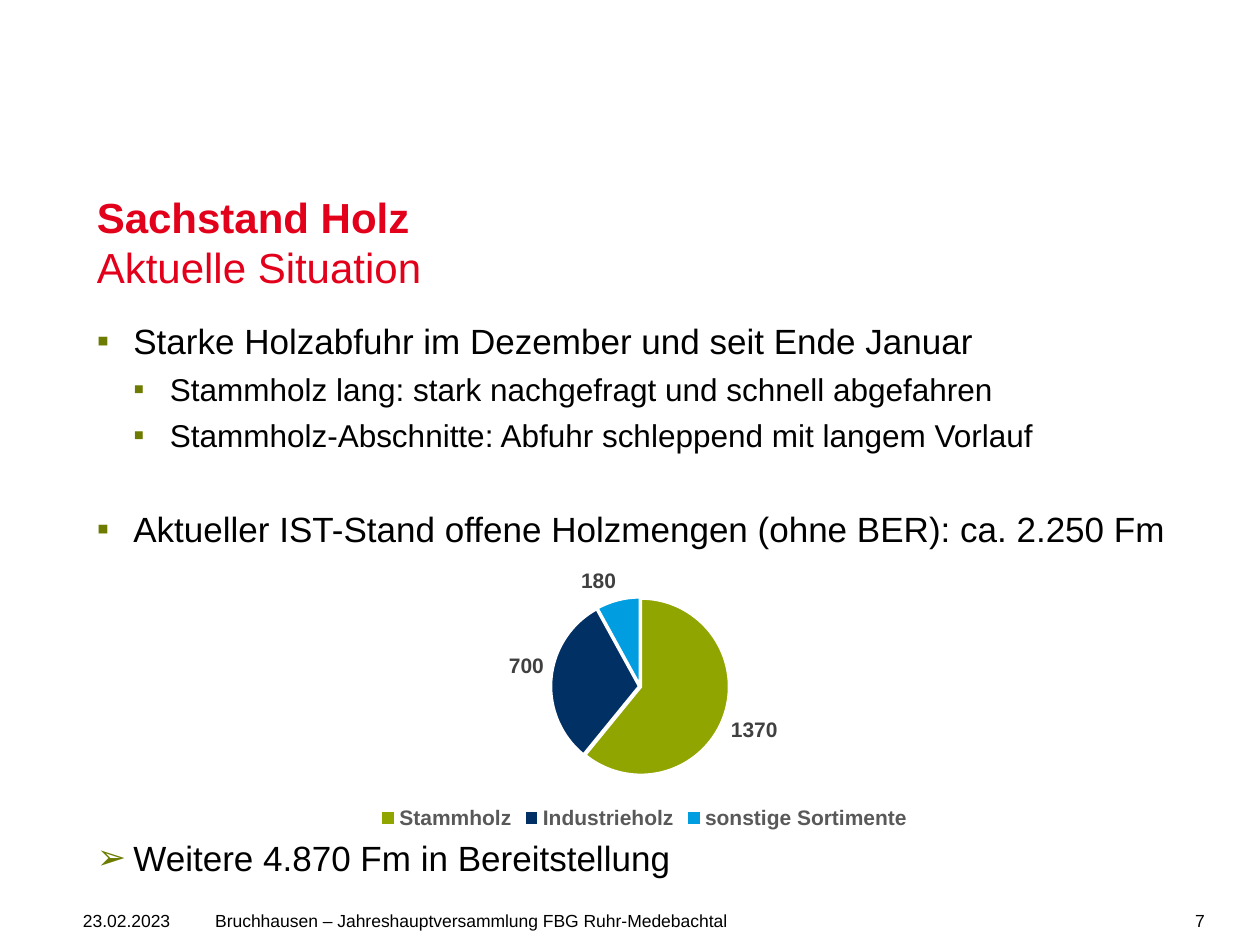
from dataclasses import dataclass

from lxml import etree
from pptx import Presentation
from pptx import util as u
from pptx.chart.data import CategoryChartData
from pptx.dml.color import RGBColor
from pptx.enum import chart as charts, text
from pptx.oxml.ns import qn

WIDTH, HEIGHT = u.Inches(10), u.Inches(7.5)


@dataclass(frozen=True)
class Theme:
    font: str = "Arial"
    title: str = "E2001A"
    body: str = "000000"
    bullet: str = "6D7C00"
    legend: str = "595959"
    label: str = "404040"
    gap: str = "FFFFFF"
    slices: tuple = ("91A500", "003064", "009EE0")
    title_size: float = 24
    level_sizes: tuple = (20, 18)
    chart_size: float = 12
    footer_size: float = 10


THEME = Theme()


def share(left, top, width, height):
    """Turn shares of the slide's size into a box."""
    return (round(left * WIDTH), round(top * HEIGHT),
            round(width * WIDTH), round(height * HEIGHT))


def style_font(font, size, color, bold=False):
    font.name = THEME.font
    font.size = u.Pt(size)
    font.bold = bold
    font.color.rgb = RGBColor.from_string(color)


def add_run(paragraph, words, size, color, bold=False):
    run = paragraph.add_run()
    run.text = words
    style_font(run.font, size, color, bold)


def add_frame(slide, box, anchor=text.MSO_ANCHOR.TOP):
    frame = slide.shapes.add_textbox(*box).text_frame
    frame.word_wrap = True
    frame.vertical_anchor = anchor
    return frame


def add_bullet(paragraph, level, symbol):
    indent = u.Inches(0.29)
    properties = paragraph._p.get_or_add_pPr()
    properties.set("marL", str(indent * (level + 1)))
    properties.set("indent", str(-indent))
    color = etree.SubElement(properties, qn("a:buClr"))
    etree.SubElement(color, qn("a:srgbClr"), val=THEME.bullet)
    etree.SubElement(properties, qn("a:buFont"), typeface=THEME.font)
    etree.SubElement(properties, qn("a:buChar"), char=symbol)


def build_title(slide, box, heading, subheading):
    paragraph = add_frame(slide, box).paragraphs[0]
    add_run(paragraph, heading, THEME.title_size, THEME.title, bold=True)
    paragraph.add_line_break()
    add_run(paragraph, subheading, THEME.title_size, THEME.title)


def build_body(slide, box, items):
    frame = add_frame(slide, box)
    for number, (level, symbol, space, words) in enumerate(items):
        paragraph = frame.add_paragraph() if number else frame.paragraphs[0]
        paragraph.level = level
        paragraph.space_before = u.Pt(space)
        add_bullet(paragraph, level, symbol)
        add_run(paragraph, words, THEME.level_sizes[level], THEME.body)


def build_pie(slide, box, amounts):
    data = CategoryChartData()
    data.categories = list(amounts)
    data.add_series("Series 1", list(amounts.values()))
    chart = slide.shapes.add_chart(charts.XL_CHART_TYPE.PIE, *box, data).chart
    style_font(chart.font, THEME.footer_size, THEME.body)
    chart.has_title = False

    # Legend below the pie
    chart.has_legend = True
    chart.legend.position = charts.XL_LEGEND_POSITION.BOTTOM
    chart.legend.include_in_layout = False
    style_font(chart.legend.font, THEME.chart_size, THEME.legend, bold=True)

    # Slices, slightly pulled apart
    plot = chart.plots[0]
    plot.vary_by_categories = True
    series = plot.series[0]
    for number, color in enumerate(THEME.slices):
        style = series.points[number].format
        style.fill.solid()
        style.fill.fore_color.rgb = RGBColor.from_string(color)
        style.line.color.rgb = RGBColor.from_string(THEME.gap)
        style.line.width = u.Pt(1.5)
    explosion = etree.Element(qn("c:explosion"), val="1")
    series._element.find(qn("c:dPt")).addprevious(explosion)

    # Values outside the slices
    labels = series.data_labels
    labels.show_value = True
    labels.show_percentage = False
    labels.position = charts.XL_LABEL_POSITION.OUTSIDE_END
    style_font(labels.font, THEME.chart_size, THEME.label, bold=True)


def build_footer(slide, top, height, parts):
    for left, width, alignment, words in parts:
        frame = add_frame(slide, share(left, top, width, height),
                          text.MSO_ANCHOR.MIDDLE)
        paragraph = frame.paragraphs[0]
        paragraph.alignment = alignment
        add_run(paragraph, words, THEME.footer_size, THEME.body)


def main():
    presentation = Presentation()
    presentation.slide_width, presentation.slide_height = WIDTH, HEIGHT
    slide = presentation.slides.add_slide(presentation.slide_layouts[6])

    build_title(slide, share(0.067, 0.196, 0.89, 0.116),
                "Sachstand Holz", "Aktuelle Situation")
    # Level, bullet, space before in points, words
    build_body(slide, share(0.067, 0.332, 0.89, 0.599), [
        (0, "▪", 0, "Starke Holzabfuhr im Dezember und seit Ende Januar"),
        (1, "▪", 4.5, "Stammholz lang: stark nachgefragt und schnell abgefahren"),
        (1, "▪", 4.5, "Stammholz-Abschnitte: Abfuhr schleppend mit langem Vorlauf"),
        (0, "▪", 31, "Aktueller IST-Stand offene Holzmengen (ohne BER): ca. 2.250 Fm"),
        (0, "➢", 164, "Weitere 4.870 Fm in Bereitstellung"),
    ])
    build_pie(slide, share(0.163, 0.584, 0.697, 0.299),
              {"Stammholz": 1370, "Industrieholz": 700, "sonstige Sortimente": 180})
    left, right = text.PP_ALIGN.LEFT, text.PP_ALIGN.RIGHT
    build_footer(slide, 0.956, 0.037, [
        (0.056, 0.097, left, "23.02.2023"),
        (0.161, 0.74, left,
         "Bruchhausen – Jahreshauptversammlung FBG Ruhr-Medebachtal"),
        (0.911, 0.055, right, "7"),
    ])
    presentation.save("out.pptx")


if __name__ == "__main__":
    main()
